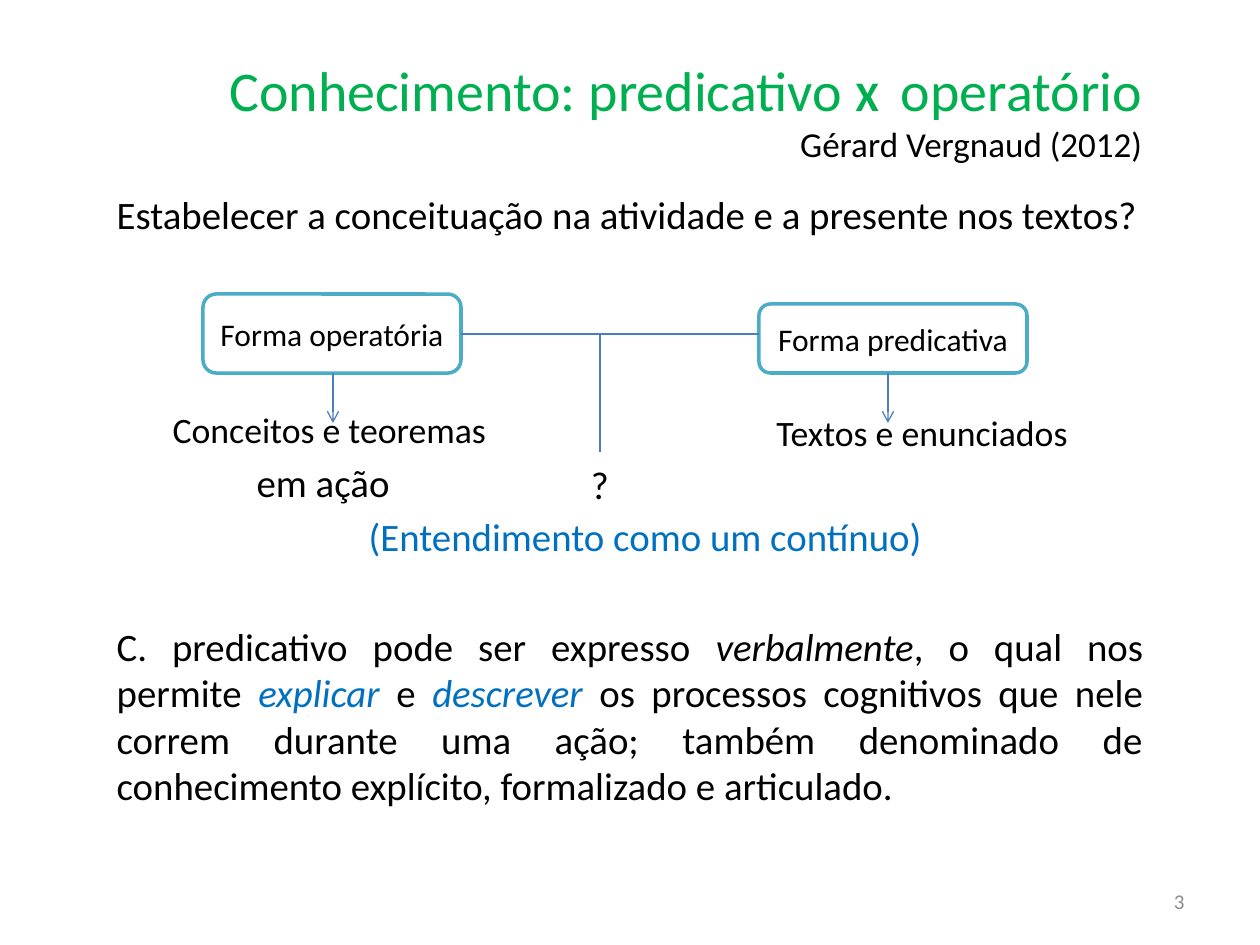
from pptx import Presentation
from pptx.dml.color import RGBColor
from pptx.enum.shapes import MSO_CONNECTOR, MSO_SHAPE
from pptx.enum.text import MSO_ANCHOR, MSO_AUTO_SIZE, PP_ALIGN
from pptx.oxml.ns import qn
from pptx.util import Emu, Pt
from lxml.etree import SubElement

GREEN = RGBColor(0x00, 0xB0, 0x50)
BLUE = RGBColor(0x00, 0x70, 0xC0)
TEAL = RGBColor(0x4B, 0xAC, 0xC6)
LINE_BLUE = RGBColor(0x4B, 0x7E, 0xBC)
GREY = RGBColor(0x8C, 0x8C, 0x8C)
BLACK = RGBColor(0x00, 0x00, 0x00)
WHITE = RGBColor(0xFF, 0xFF, 0xFF)
FONT = "Calibri"
BODY_SIZE = 22.2
LABEL_SIZE = 20.4


def px(length):
    return Emu(round(length * 914400 / 126))


def place(shape, box):
    shape.left, shape.top, shape.width, shape.height = map(px, box)


def prepare_frame(shape, anchor):
    frame = shape.text_frame
    frame.word_wrap = True
    frame.auto_size = MSO_AUTO_SIZE.NONE
    frame.vertical_anchor = anchor
    return frame


def add_run(paragraph, text, size=BODY_SIZE, color=BLACK, bold=False, italic=False):
    run = paragraph.add_run()
    run.text = text
    run.font.name = FONT
    run.font.size = Pt(size)
    run.font.color.rgb = color
    run.font.bold = bold
    run.font.italic = italic


def format_paragraph(paragraph, alignment, space_before=0, indent=0):
    paragraph.alignment = alignment
    paragraph.space_before = Pt(space_before)
    if indent:
        properties = paragraph._p.get_or_add_pPr()
        properties.set("marL", str(px(indent)))
        properties.set("indent", "0")


def fill_title(title, box):
    place(title, box)
    frame = prepare_frame(title, MSO_ANCHOR.MIDDLE)
    heading = frame.paragraphs[0]
    format_paragraph(heading, PP_ALIGN.RIGHT)
    add_run(heading, "Conhecimento: predicativo ", size=32, color=GREEN)
    add_run(heading, "X ", size=24, color=GREEN, bold=True)
    add_run(heading, " operatório", size=32, color=GREEN)
    author = frame.add_paragraph()
    format_paragraph(author, PP_ALIGN.RIGHT)
    add_run(author, "Gérard Vergnaud (2012)", size=20)


def fill_body(body, box):
    place(body, box)
    frame = prepare_frame(body, MSO_ANCHOR.TOP)
    question = frame.paragraphs[0]
    format_paragraph(question, PP_ALIGN.JUSTIFY, space_before=4.4)
    add_run(question, "Estabelecer a conceituação na atividade e a presente nos textos?")

    indented_lines = [
        ("Conceitos e teoremas", LABEL_SIZE, BLACK, 97.6, 56),
        ("em ação", BODY_SIZE, BLACK, 4.4, 140),
        ("(Entendimento como um contínuo)", BODY_SIZE, BLUE, 4.4, 252),
    ]
    for text, size, color, space_before, indent in indented_lines:
        paragraph = frame.add_paragraph()
        format_paragraph(paragraph, PP_ALIGN.LEFT, space_before, indent)
        add_run(paragraph, text, size=size, color=color)

    conclusion = frame.add_paragraph()
    format_paragraph(conclusion, PP_ALIGN.JUSTIFY, space_before=36)
    add_run(conclusion, "C. predicativo pode ser expresso ")
    add_run(conclusion, "verbalmente", italic=True)
    add_run(conclusion, ", o qual nos permite ")
    add_run(conclusion, "explicar", color=BLUE, italic=True)
    add_run(conclusion, " e ")
    add_run(conclusion, "descrever", color=BLUE, italic=True)
    add_run(
        conclusion,
        " os processos cognitivos que nele correm durante uma ação; também "
        "denominado de conhecimento explícito, formalizado e articulado.",
    )


def add_label(slide, box, text, alignment=PP_ALIGN.CENTER, **run_format):
    text_box = slide.shapes.add_textbox(*map(px, box))
    paragraph = prepare_frame(text_box, MSO_ANCHOR.MIDDLE).paragraphs[0]
    format_paragraph(paragraph, alignment)
    add_run(paragraph, text, **run_format)


def add_form_box(slide, box, text):
    shape = slide.shapes.add_shape(MSO_SHAPE.ROUNDED_RECTANGLE, *map(px, box))
    shape.shadow.inherit = False
    shape.fill.solid()
    shape.fill.fore_color.rgb = WHITE
    shape.line.color.rgb = TEAL
    shape.line.width = Pt(2)
    paragraph = prepare_frame(shape, MSO_ANCHOR.MIDDLE).paragraphs[0]
    format_paragraph(paragraph, PP_ALIGN.CENTER)
    add_run(paragraph, text, size=18)


def add_line(slide, start, end, arrow=False):
    connector = slide.shapes.add_connector(
        MSO_CONNECTOR.STRAIGHT, *map(px, (*start, *end))
    )
    connector.line.color.rgb = LINE_BLUE
    connector.line.width = Pt(0.75)
    if arrow:
        SubElement(connector.line._get_or_add_ln(), qn("a:tailEnd"), type="arrow")
    SubElement(connector._element.spPr, qn("a:effectLst"))


def add_diagram(slide, box):
    left, top, width, height = box
    bottom = top + 79
    link_y = top + 40
    middle = left + 397
    add_form_box(slide, (left, top, 258, 79), "Forma operatória")
    add_form_box(slide, (left + width - 268, top + 10, 268, 69), "Forma predicativa")
    add_line(slide, (left + 258, link_y), (left + width - 268, link_y))
    for x in (left + 130, left + 685):
        add_line(slide, (x, bottom), (x, bottom + 50), arrow=True)
    add_line(slide, (middle, link_y), (middle, top + height))
    add_label(slide, (left + 539, top + 113, 360, 50), "Textos e enunciados", size=LABEL_SIZE)
    add_label(slide, (middle - 30, top + height + 7, 60, 50), "?")


def main():
    presentation = Presentation()
    presentation.slide_width = px(1260)
    presentation.slide_height = px(945)
    slide = presentation.slides.add_slide(presentation.slide_layouts[0])
    fill_title(slide.shapes.title, (84, 55, 1071, 110))
    fill_body(slide.placeholders[1], (104, 184, 1052, 655))
    add_label(slide, (903, 876, 294, 50), "3", PP_ALIGN.RIGHT, size=12, color=GREY)
    add_diagram(slide, (203, 294, 824, 158))
    presentation.save("out.pptx")


if __name__ == "__main__":
    main()
